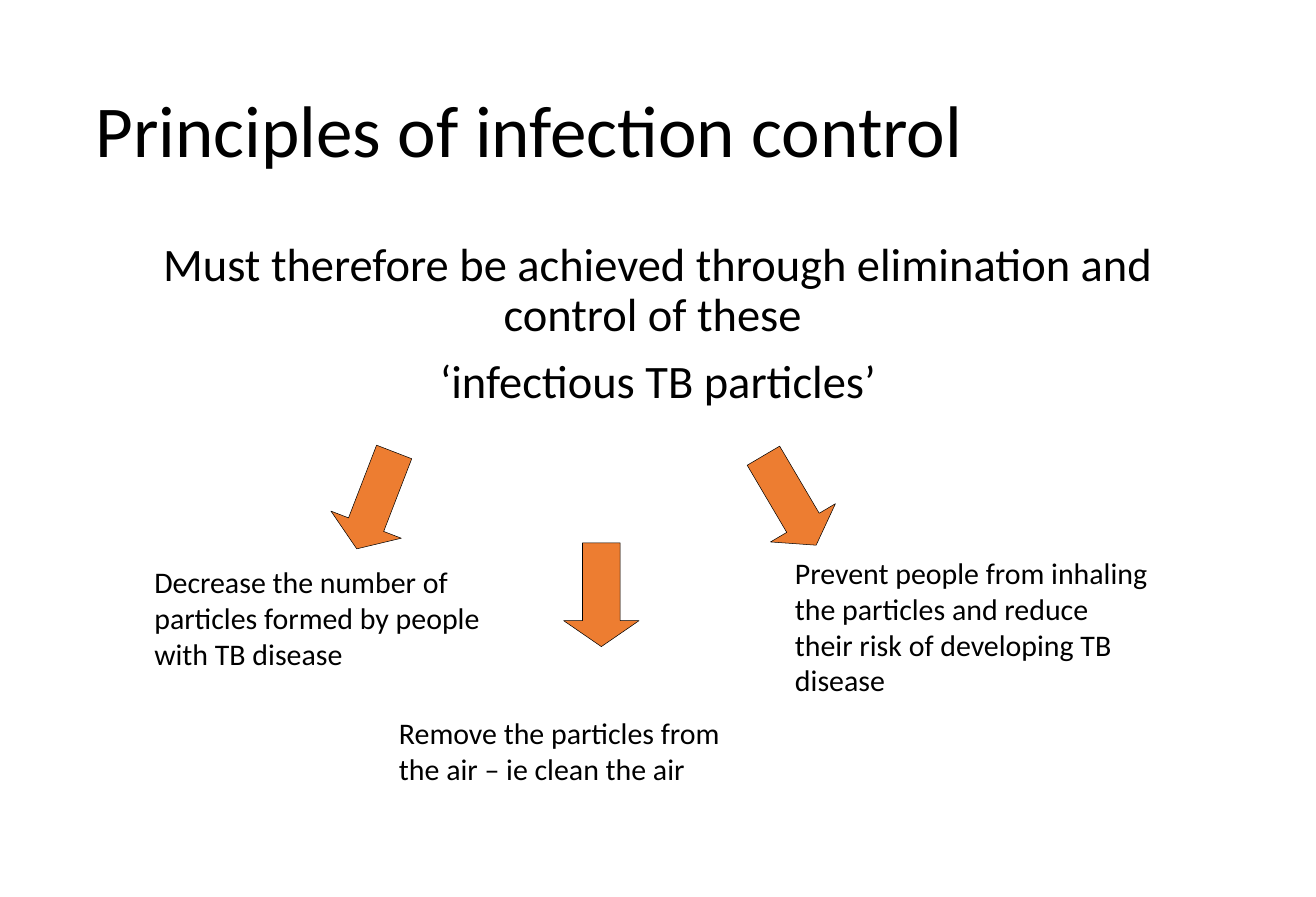
from pptx import Presentation
from pptx import util as u
from pptx.dml.color import RGBColor
from pptx.enum import shapes, text

# Content
TITLE = "Principles of infection control"
BODY = [
    "Must therefore be achieved through elimination and control of these ",
    "‘infectious TB particles’",
]
# (caption, caption left, top, height, arrow left, arrow top, arrow rotation)
MEASURES = [
    ("Decrease the number of particles formed by people with TB disease",
     7.49, 28.17, 5.7, 16.94, 22.5, 21.1),
    ("Remove the particles from the air – ie clean the air",
     19.76, 35.74, 3.9, 28.27, 27.23, 0),
    ("Prevent people from inhaling the particles and reduce their risk of developing TB disease",
     39.62, 27.69, 7.54, 37.72, 22.5, 329.5),
]
COLORS = {"text": "000000", "arrow": "ED7D31", "outline": "000000"}
FONT = "Calibri"

# Layout in centimetres
SLIDE_W, SLIDE_H = 66, 45
MARGIN = 4.54
CONTENT_W = SLIDE_W - 2 * MARGIN
CAPTION_W = 18.42
ARROW_W, ARROW_H = 3.78, 5.21


def rgb(name):
    return RGBColor.from_string(COLORS[name])


def add_text(s, lines, box, size, align=text.PP_ALIGN.LEFT,
             anchor=text.MSO_ANCHOR.TOP, spacing=1.0, before=0):
    sp = s.shapes.add_textbox(*map(u.Cm, box))
    tf = sp.text_frame
    tf.word_wrap = True
    tf.vertical_anchor = anchor
    for i, line in enumerate(lines):
        p = tf.add_paragraph() if i else tf.paragraphs[0]
        p.alignment = align
        p.line_spacing = spacing
        p.space_before = u.Pt(before)
        r = p.add_run()
        r.text = line
        r.font.name = FONT
        r.font.size = u.Pt(size)
        r.font.color.rgb = rgb("text")
    return sp


def add_arrow(s, left, top, rotation):
    sp = s.shapes.add_shape(shapes.MSO_SHAPE.DOWN_ARROW,
                            *map(u.Cm, (left, top, ARROW_W, ARROW_H)))
    sp.adjustments[0] = 0.5
    sp.adjustments[1] = 0.344
    sp.rotation = rotation
    sp.shadow.inherit = False
    sp.fill.solid()
    sp.fill.fore_color.rgb = rgb("arrow")
    sp.line.color.rgb = rgb("outline")
    sp.line.width = u.Pt(0.75)


def main():
    prs = Presentation()
    prs.slide_width, prs.slide_height = u.Cm(SLIDE_W), u.Cm(SLIDE_H)
    s = prs.slides.add_slide(prs.slide_layouts[6])

    # Title and statement
    add_text(s, [TITLE], (MARGIN, 2.39, CONTENT_W, 8.69), 103.9,
             anchor=text.MSO_ANCHOR.MIDDLE, spacing=0.9)
    add_text(s, BODY, (MARGIN, 11.98, CONTENT_W, 28.55), 66.1,
             align=text.PP_ALIGN.CENTER, spacing=0.9, before=23.6)

    # Measures, each with its arrow
    for caption, left, top, height, arrow_left, arrow_top, rotation in MEASURES:
        add_text(s, [caption], (left, top, CAPTION_W, height), 42.5)
        add_arrow(s, arrow_left, arrow_top, rotation)

    prs.save("out.pptx")


if __name__ == "__main__":
    main()
